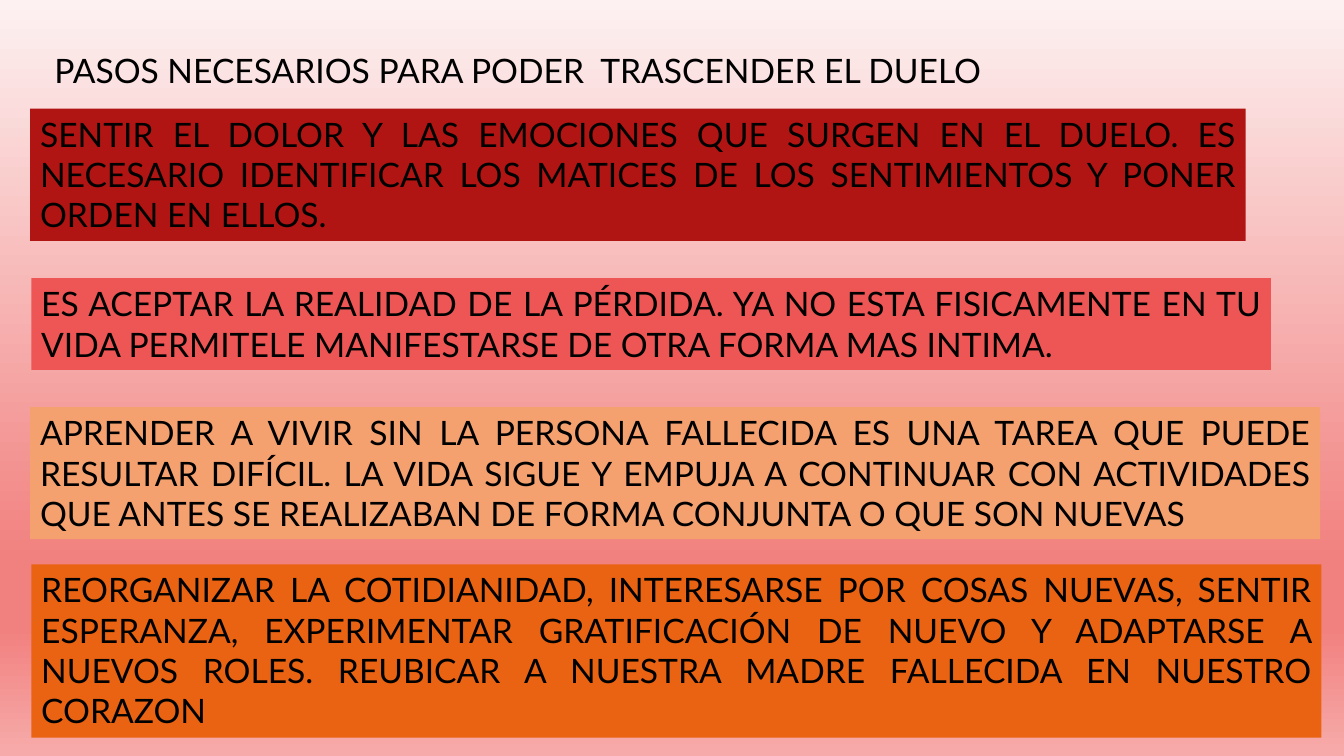
"""Build the slide on the steps needed to move through grief."""
from lxml.etree import SubElement
from pptx import Presentation
from pptx.dml.color import RGBColor
from pptx.enum.shapes import MSO_SHAPE
from pptx.enum.text import MSO_ANCHOR, MSO_AUTO_SIZE, PP_ALIGN
from pptx.oxml.ns import qn
from pptx.util import Cm, Pt

COLORS = {
    "text": "000000",
    "feel": "B01513",
    "accept": "ED5654",
    "learn": "F4A16F",
    "reorganize": "EA6312",
    "pale": "FDF1F1",
    "coral": "F1817F",
    "pink": "F6ABAA",
}
BACKGROUND_STOPS = [(0, "pale"), (74, "coral"), (83, "coral"), (100, "pink")]
STEPS = [
    ("feel", 0.76, 2.74, 30.63, 3.33,
     "SENTIR EL DOLOR Y LAS EMOCIONES QUE SURGEN EN EL DUELO. ES NECESARIO "
     "IDENTIFICAR LOS MATICES DE LOS SENTIMIENTOS Y PONER ORDEN EN ELLOS."),
    ("accept", 0.79, 7.01, 31.24, 2.31,
     "ES ACEPTAR LA REALIDAD DE LA PÉRDIDA. YA NO ESTA FISICAMENTE EN TU VIDA "
     "PERMITELE MANIFESTARSE DE OTRA FORMA MAS INTIMA."),
    ("learn", 0.76, 10.26, 32.51, 3.33,
     "APRENDER A VIVIR SIN LA PERSONA FALLECIDA ES UNA TAREA QUE PUEDE RESULTAR "
     "DIFÍCIL. LA VIDA SIGUE Y EMPUJA A CONTINUAR CON ACTIVIDADES QUE ANTES SE "
     "REALIZABAN DE FORMA CONJUNTA O QUE SON NUEVAS"),
    ("reorganize", 0.79, 14.22, 32.51, 4.37,
     "REORGANIZAR LA COTIDIANIDAD, INTERESARSE POR COSAS NUEVAS, SENTIR "
     "ESPERANZA, EXPERIMENTAR GRATIFICACIÓN DE NUEVO Y ADAPTARSE A NUEVOS ROLES. "
     "REUBICAR A NUESTRA MADRE FALLECIDA EN NUESTRO CORAZON"),
]


def write_text(shape, text, alignment):
    frame = shape.text_frame
    frame.word_wrap = True
    frame.auto_size = MSO_AUTO_SIZE.SHAPE_TO_FIT_TEXT
    frame.vertical_anchor = MSO_ANCHOR.TOP
    paragraph = frame.paragraphs[0]
    paragraph.alignment = alignment
    run = paragraph.add_run()
    run.text = text
    run.font.name = "Lato"
    run.font.size = Pt(24)
    run.font.color.rgb = RGBColor.from_string(COLORS["text"])


presentation = Presentation()
presentation.slide_width = Cm(33.87)
presentation.slide_height = Cm(19.05)
slide = presentation.slides.add_slide(presentation.slide_layouts[6])

background = slide.background.fill
background.gradient()
background.gradient_angle = 270
stop_list = slide.element.find(".//" + qn("a:gsLst"))
for stop in list(stop_list):
    stop_list.remove(stop)
for percent, color in BACKGROUND_STOPS:
    stop = SubElement(stop_list, qn("a:gs"), pos=str(percent * 1000))
    SubElement(stop, qn("a:srgbClr"), val=COLORS[color])

title = slide.shapes.add_textbox(Cm(1.12), Cm(1.14), Cm(29.21), Cm(1.28))
write_text(title, "PASOS NECESARIOS PARA PODER  TRASCENDER EL DUELO", PP_ALIGN.LEFT)

for color, left, top, width, height, text in STEPS:
    step = slide.shapes.add_shape(
        MSO_SHAPE.RECTANGLE, Cm(left), Cm(top), Cm(width), Cm(height))
    step.shadow.inherit = False
    step.fill.solid()
    step.fill.fore_color.rgb = RGBColor.from_string(COLORS[color])
    step.line.fill.background()
    write_text(step, text, PP_ALIGN.JUSTIFY)

presentation.save("out.pptx")
